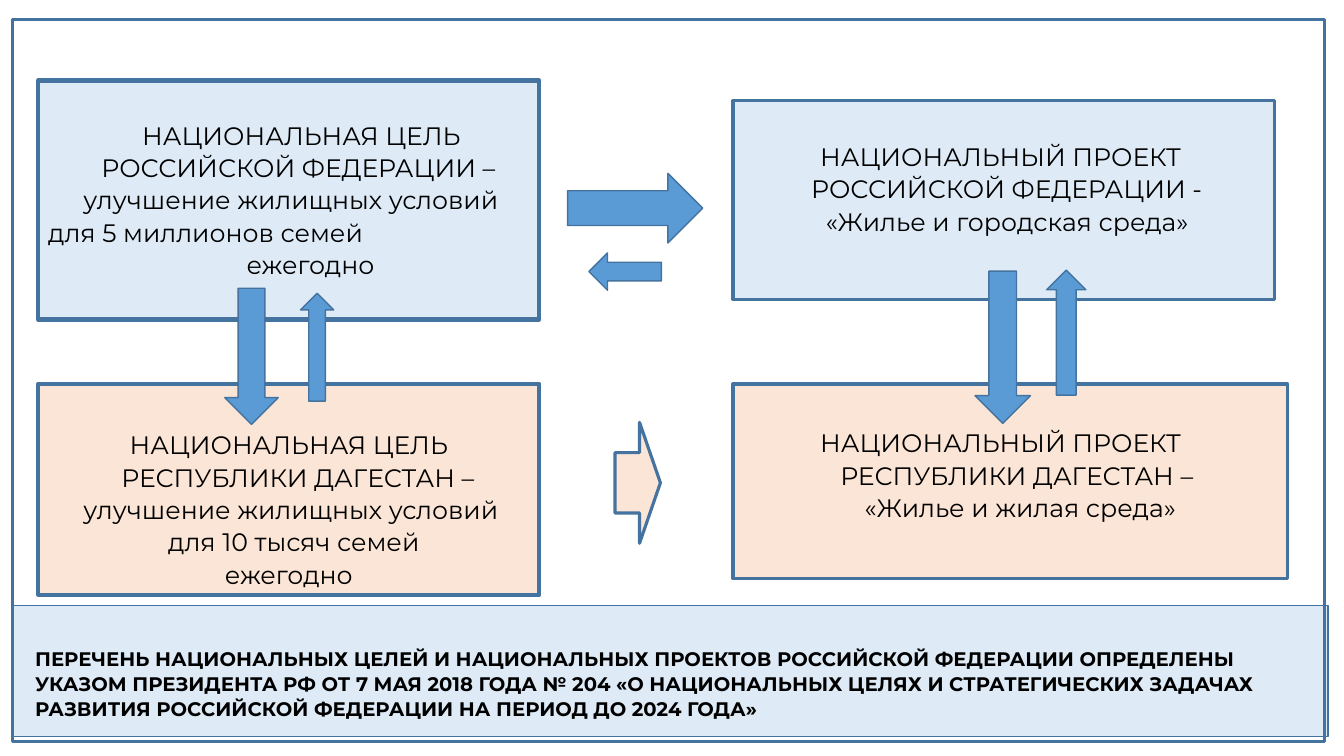
from pptx import Presentation
from pptx.dml.color import RGBColor
from pptx.enum import shapes, text
from pptx.util import Inches, Pt

OUTLINE, ARROW_BLUE = "43739E", "5B9BD5"
FEDERAL, REGIONAL = "DEEBF7", "FBE5D6"
KIND = shapes.MSO_SHAPE
CENTER, LEFT = text.PP_ALIGN.CENTER, text.PP_ALIGN.LEFT


def colour(hex_code):
    """Turn a hex string into a colour."""
    return RGBColor.from_string(hex_code)


def add_figure(slide, kind, place, fill, line_width=1):
    """Add an outlined preset shape, hollow when fill is None."""
    figure = slide.shapes.add_shape(kind, *map(Inches, place))
    figure.shadow.inherit = False
    if fill:
        figure.fill.solid()
        figure.fill.fore_color.rgb = colour(fill)
    else:
        figure.fill.background()
    figure.line.color.rgb = colour(OUTLINE)
    figure.line.width = Pt(line_width)
    return figure


def add_caption(slide, place, lines, size=18, bold=False):
    """Add a text box from (wording, alignment, left indent) lines."""
    frame = slide.shapes.add_textbox(*map(Inches, place)).text_frame
    frame.word_wrap = True
    frame.margin_top = frame.margin_bottom = 0
    for number, (wording, alignment, indent) in enumerate(lines):
        paragraph = frame.paragraphs[0] if number == 0 else frame.add_paragraph()
        paragraph.alignment = alignment
        paragraph.line_spacing = 1.07
        if indent:
            paragraph._p.get_or_add_pPr().set("marL", str(Inches(indent)))
        run = paragraph.add_run()
        run.text = wording
        run.font.name = "Montserrat"
        run.font.size = Pt(size)
        run.font.bold = bold
        run.font.color.rgb = colour("000000")


def add_panels(slide):
    """Draw the four goal and project panels and the decree band."""
    for place, fill, line_width in [
        ((7.27, 3.81, 5.5, 1.93), REGIONAL, 2.25),
        ((0.38, 3.81, 4.97, 2.09), REGIONAL, 3),
        ((7.27, 1, 5.37, 1.97), FEDERAL, 2.25),
        ((0.12, 6.01, 13.05, 1.3), FEDERAL, 1),
        ((0.38, 0.8, 4.97, 2.37), FEDERAL, 3),
    ]:
        add_figure(slide, KIND.RECTANGLE, place, fill, line_width)


def add_captions(slide):
    """Write the wording of the four panels and the decree."""
    add_caption(slide, (0.38, 1.17, 4.97, 1.63), [
        ("НАЦИОНАЛЬНАЯ ЦЕЛЬ", CENTER, 0.25),
        ("РОССИЙСКОЙ ФЕДЕРАЦИИ –", CENTER, 0.19),
        ("улучшение жилищных условий", CENTER, 0.04),
        ("для 5 миллионов семей", LEFT, 0),
        ("ежегодно", CENTER, 0.43),
    ])
    add_caption(slide, (0.38, 4.24, 4.97, 1.63), [
        ("НАЦИОНАЛЬНАЯ ЦЕЛЬ", CENTER, 0),
        ("РЕСПУБЛИКИ ДАГЕСТАН –", CENTER, 0.18),
        ("улучшение жилищных условий", CENTER, 0.04),
        ("для 10 тысяч семей", CENTER, 0.1),
        ("ежегодно", CENTER, 0),
    ])
    add_caption(slide, (7.21, 1.38, 5.43, 0.98), [
        ("НАЦИОНАЛЬНЫЙ ПРОЕКТ", CENTER, 0),
        ("РОССИЙСКОЙ ФЕДЕРАЦИИ -", CENTER, 0.12),
        ("«Жилье и городская среда»", CENTER, 0.13),
    ])
    add_caption(slide, (7.21, 4.22, 5.43, 0.98), [
        ("НАЦИОНАЛЬНЫЙ ПРОЕКТ", CENTER, 0),
        ("РЕСПУБЛИКИ ДАГЕСТАН –", CENTER, 0.32),
        ("«Жилье и жилая среда»", CENTER, 0.39),
    ])
    decree = (
        "ПЕРЕЧЕНЬ НАЦИОНАЛЬНЫХ ЦЕЛЕЙ И НАЦИОНАЛЬНЫХ ПРОЕКТОВ "
        "РОССИЙСКОЙ ФЕДЕРАЦИИ ОПРЕДЕЛЕНЫ УКАЗОМ ПРЕЗИДЕНТА РФ "
        "ОТ 7 МАЯ 2018 ГОДА № 204 «О НАЦИОНАЛЬНЫХ ЦЕЛЯХ "
        "И СТРАТЕГИЧЕСКИХ ЗАДАЧАХ РАЗВИТИЯ РОССИЙСКОЙ ФЕДЕРАЦИИ "
        "НА ПЕРИОД ДО 2024 ГОДА»"
    )
    add_caption(slide, (0.25, 6.4, 12.63, 0.76), [(decree, LEFT, 0)], 14, True)


def add_arrows(slide):
    """Draw the arrows that link goals and projects."""
    for kind, place in [
        (KIND.DOWN_ARROW, (2.23, 2.86, 0.53, 1.35)),
        (KIND.RIGHT_ARROW, (5.63, 1.72, 1.34, 0.69)),
        (KIND.DOWN_ARROW, (9.67, 2.69, 0.55, 1.51)),
        (KIND.UP_ARROW, (2.98, 2.91, 0.33, 1.07)),
        (KIND.UP_ARROW, (10.38, 2.68, 0.39, 1.24)),
        (KIND.LEFT_ARROW, (5.84, 2.51, 0.72, 0.37)),
    ]:
        add_figure(slide, kind, place, ARROW_BLUE)
    regional_arrow = add_figure(
        slide, KIND.RIGHT_ARROW, (6.1, 4.19, 0.45, 1.2), REGIONAL, 2.25)
    regional_arrow.adjustments[1] = 0.46


def main():
    """Build and save the slide."""
    deck = Presentation()
    deck.slide_width, deck.slide_height = Inches(13.33), Inches(7.5)
    slide = deck.slides.add_slide(deck.slide_layouts[6])
    add_panels(slide)
    add_captions(slide)
    add_arrows(slide)
    add_figure(slide, KIND.RECTANGLE, (0.12, 0.19, 13.02, 7.17), None, 2.25)
    deck.save("out.pptx")


if __name__ == "__main__":
    main()
